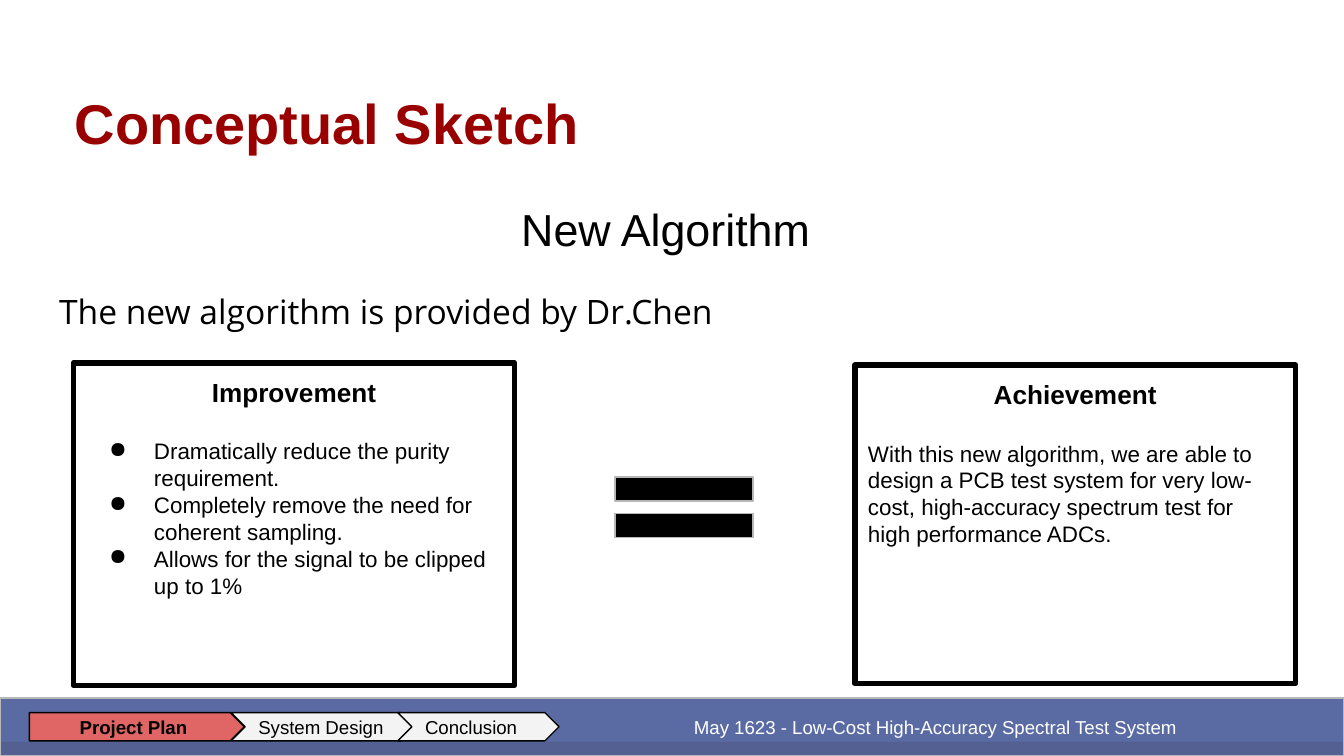
from dataclasses import dataclass

from lxml.etree import SubElement
from pptx import Presentation
from pptx.dml.color import RGBColor
from pptx.enum.shapes import MSO_SHAPE
from pptx.enum.text import MSO_ANCHOR, MSO_AUTO_SIZE, PP_ALIGN
from pptx.oxml.ns import qn
from pptx.util import Pt


@dataclass(frozen=True)
class Theme:
    font: str = "Arial"
    body_font: str = "Open Sans"
    black: str = "000000"
    white: str = "FFFFFF"
    red: str = "990000"
    tan: str = "CCA677"
    blue: str = "425696"
    grey: str = "B7B7B7"
    active: str = "E06666"
    inactive: str = "F3F3F3"
    title: int = 30
    subtitle: int = 24
    lead: int = 18
    heading: int = 14
    text: int = 12
    footer: int = 10
    inset: float = 7.2


THEME = Theme()
TITLE = "Conceptual Sketch"
SUBTITLE = "New Algorithm"
LEAD = "The new algorithm is provided by Dr.Chen"
CARDS = [
    {"heading": "Improvement", "place": (39.4, 194.4, 236.2, 172.8), "bullets": True,
     "lines": ["Dramatically reduce the purity requirement.",
               "Completely remove the need for coherent sampling.",
               "Allows for the signal to be clipped up to 1%"]},
    {"heading": "Achievement", "place": (457.9, 195.6, 236.2, 170.6), "bullets": False,
     "lines": ["With this new algorithm, we are able to design a PCB test system for very "
               "low-cost, high-accuracy spectrum test for high performance ADCs."]},
]
FOOTER = "May 1623 - Low-Cost High-Accuracy Spectral Test System"
STEPS = [  # label, left, width
    ("Project Plan", 15.8, 115.2),
    ("System Design", 123.8, 98.6),
    ("Conclusion", 213.1, 86.4),
]
STEP_TOP, STEP_HEIGHT = 381.8, 15.1


def prepare_frame(shape, anchor, left=THEME.inset, right=THEME.inset):
    frame = shape.text_frame
    frame.word_wrap = True
    frame.auto_size = MSO_AUTO_SIZE.NONE
    frame.vertical_anchor = anchor
    frame.margin_left, frame.margin_right = Pt(left), Pt(right)
    frame.margin_top = frame.margin_bottom = Pt(THEME.inset)
    return frame


def write(para, text, size, color=THEME.black, bold=False, align=PP_ALIGN.LEFT, font=THEME.font):
    para.text = text
    para.alignment = align
    para.font.size, para.font.name, para.font.bold = Pt(size), font, bold
    para.font.color.rgb = RGBColor.from_string(color)


def set_bullet(para, char=None, margin=0, indent=0):
    """Give the paragraph a bullet, or switch bullets off when char is None."""
    props = para._p.get_or_add_pPr()
    props.set("marL", str(Pt(margin)))
    props.set("indent", str(Pt(indent)))
    if char:
        SubElement(props, qn("a:buChar"), char=char)
    else:
        SubElement(props, qn("a:buNone"))


def place(shape, *lengths):
    shape.left, shape.top, shape.width, shape.height = map(Pt, lengths)


def add_shape(page, kind, lengths, fill=None, line=None, weight=0.75):
    shape = page.shapes.add_shape(kind, *map(Pt, lengths))
    shape.shadow.inherit = False
    if fill:
        shape.fill.solid()
        shape.fill.fore_color.rgb = RGBColor.from_string(fill)
    else:
        shape.fill.background()
    if line:
        shape.line.color.rgb = RGBColor.from_string(line)
        shape.line.width = Pt(weight)
    else:
        shape.line.fill.background()
    return shape


def fill_placeholders(page):
    title, body = page.placeholders
    place(title, 24.5, 25.2, 671, 65.5)
    frame = prepare_frame(title, MSO_ANCHOR.BOTTOM, left=15.6)
    write(frame.paragraphs[0], TITLE, THEME.title, THEME.red, True)

    place(body, 24.5, 96.5, 671, 264.2)
    frame = prepare_frame(body, MSO_ANCHOR.TOP, right=14)
    subtitle, lead = frame.paragraphs[0], frame.add_paragraph()
    write(subtitle, SUBTITLE, THEME.subtitle, align=PP_ALIGN.CENTER)
    write(lead, LEAD, THEME.lead, font=THEME.body_font)
    for para in (subtitle, lead):
        para.line_spacing = 1.15
        para.space_before, para.space_after = Pt(0), Pt(16)
        set_bullet(para)


def add_card(page, card):
    box = add_shape(page, MSO_SHAPE.RECTANGLE, card["place"], line=THEME.black, weight=3)
    frame = prepare_frame(box, MSO_ANCHOR.TOP)
    heading = frame.paragraphs[0]
    write(heading, card["heading"], THEME.heading, bold=True, align=PP_ALIGN.CENTER)
    heading.space_after = Pt(16)
    for line in card["lines"]:
        para = frame.add_paragraph()
        write(para, line, THEME.text)
        if card["bullets"]:
            set_bullet(para, "●", 36, -24)


def add_footer(page):
    bar = add_shape(page, MSO_SHAPE.RECTANGLE, (0, 373.9, 720, 31.1), THEME.blue, THEME.grey)
    color = bar._element.spPr.find(qn("a:solidFill"))[0]
    SubElement(color, qn("a:alpha"), val="87000")
    frame = prepare_frame(bar, MSO_ANCHOR.MIDDLE, left=289)
    write(frame.paragraphs[0], FOOTER, THEME.footer, THEME.white, align=PP_ALIGN.CENTER)

    for index, (label, left, width) in enumerate(STEPS):
        active = index == 0
        step = add_shape(page, MSO_SHAPE.PENTAGON if active else MSO_SHAPE.CHEVRON,
                         (left, STEP_TOP, width, STEP_HEIGHT),
                         THEME.active if active else THEME.inactive, THEME.black)
        frame = prepare_frame(step, MSO_ANCHOR.MIDDLE)
        write(frame.paragraphs[0], label, THEME.footer, bold=active,
              align=PP_ALIGN.CENTER if active else PP_ALIGN.LEFT)


def main():
    deck = Presentation()
    deck.slide_width, deck.slide_height = Pt(720), Pt(405)
    page = deck.slides.add_slide(deck.slide_layouts[1])
    add_shape(page, MSO_SHAPE.RECTANGLE, (0, 397.4, 720, 7.6), THEME.tan)
    fill_placeholders(page)
    improvement, achievement = CARDS
    add_card(page, improvement)
    equals = add_shape(page, MSO_SHAPE.MATH_EQUAL, (316.1, 244.1, 100.8, 55.4),
                       THEME.black, THEME.grey)
    equals.adjustments[0], equals.adjustments[1] = 0.235, 0.118
    add_card(page, achievement)
    add_footer(page)
    deck.save("out.pptx")


if __name__ == "__main__":
    main()
